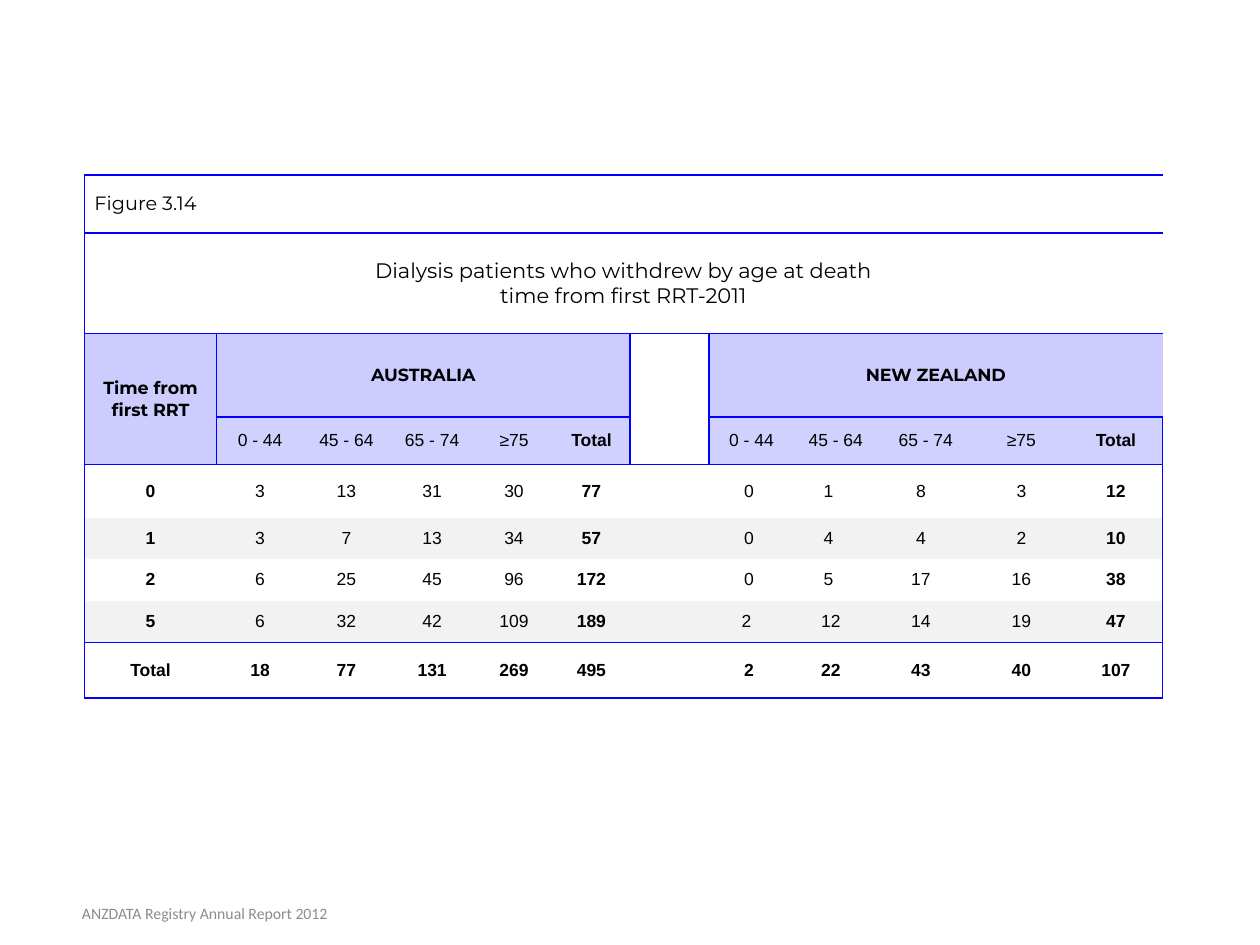
from lxml import etree
from pptx import Presentation
from pptx.dml.color import RGBColor
from pptx.enum import text as t
from pptx.oxml.ns import qn
from pptx.util import Pt

BLACK = RGBColor(0, 0, 0)
GREY = RGBColor(0x8C, 0x8C, 0x8C)
WHITE = RGBColor(0xFF, 0xFF, 0xFF)
BAND = RGBColor(0xF2, 0xF2, 0xF2)
LILAC = RGBColor(0xCC, 0xCC, 0xFF)
PALE = RGBColor(0xD1, 0xD1, 0xFF)
BLUE = RGBColor(0, 0, 0xFF)

MID = t.MSO_ANCHOR.MIDDLE
LEFT, CENTER = t.PP_ALIGN.LEFT, t.PP_ALIGN.CENTER
HEAD = {"name": "Montserrat", "size": Pt(10), "bold": True, "color": BLACK}
BODY = {**HEAD, "name": "Arial", "bold": False}
TOTAL = {**BODY, "bold": True}
FOOT = {"name": "Calibri", "size": Pt(9), "bold": False, "color": GREY}

WIDTHS = [75.6, 49.7, 49, 49, 44.6, 43.9, 45.4, 48.2, 48.2, 54.7, 54.7, 53.3]
HEIGHTS = [33.1, 57.6, 47.5, 27.4, 30.2, 23.8, 23.8, 23.8, 31.7]
GAP = 6  # empty column between the two countries
AGES = ["0 - 44", "45 - 64", "65 - 74", "≥75", "Total"]
DATA = [
    ["0", 3, 13, 31, 30, 77, "", 0, 1, 8, 3, 12],
    ["1", 3, 7, 13, 34, 57, "", 0, 4, 4, 2, 10],
    ["2", 6, 25, 45, 96, 172, "", 0, 5, 17, 16, 38],
    ["5", 6, 32, 42, 109, 189, "", 2, 12, 14, 19, 47],
    ["Total", 18, 77, 131, 269, 495, "", 2, 22, 43, 40, 107],
]
# extra right margin, in steps, of the first three New Zealand columns
SHIFTS = [(1, 3, 2)] * 3 + [(2, 2, 2), (1, 2, 2)]
STEP = 2.78


def write(frame, words, style, align=CENTER):
    frame.text = words
    for para in frame.paragraphs:
        para.alignment = align
        for run in para.runs:
            for key, val in style.items():
                if key == "color":
                    run.font.color.rgb = val
                else:
                    setattr(run.font, key, val)


def ruled_row(edge, col):
    """Tell whether a horizontal rule runs on this row edge in this column."""
    return edge in (0, 1, 2, 4, 8, 9) or (edge == 3 and col not in (0, GAP))


def ruled_col(edge, row):
    return edge in (0, 12) or (edge in (1, GAP, GAP + 1) and row in (2, 3))


def rule(cell, row, col):
    """Set the four borders of a cell."""
    props = cell._tc.get_or_add_tcPr()
    sides = {"L": ruled_col(col, row), "R": ruled_col(col + 1, row),
             "T": ruled_row(row, col), "B": ruled_row(row + 1, col)}
    for side, shown in sides.items():
        line = etree.SubElement(props, qn("a:ln" + side), w=str(Pt(1)))
        if shown:
            fill = etree.SubElement(line, qn("a:solidFill"))
            etree.SubElement(fill, qn("a:srgbClr"), val=str(BLUE))
        else:
            etree.SubElement(line, qn("a:noFill"))


def shade(row, col):
    if row in (2, 3) and col != GAP:
        return LILAC if row == 2 or col == 0 else PALE
    return BAND if row in (5, 7) else WHITE


def prepare(cell, row, col):
    """Give a cell its margins, borders, fill and small empty text size."""
    rule(cell, row, col)
    cell.fill.solid()
    cell.fill.fore_color.rgb = shade(row, col)
    cell.vertical_anchor = MID
    cell.margin_left = cell.margin_right = Pt(2.9)
    cell.margin_top = cell.margin_bottom = Pt(1.4)
    para = cell.text_frame.paragraphs[0]._p
    etree.SubElement(para, qn("a:endParaRPr"), sz="1000")


def add_heads(grid):
    last = len(WIDTHS) - 1
    spans = [(0, 0, 0, last), (1, 0, 1, last), (2, 0, 3, 0),
             (2, 1, 2, GAP - 1), (2, GAP + 1, 2, last)]
    for top, left, low, right in spans:
        grid.cell(top, left).merge(grid.cell(low, right))
    label = grid.cell(0, 0)
    label.margin_left = Pt(5.8)
    write(label.text_frame, "Figure 3.14",
          {**HEAD, "size": Pt(11), "bold": False}, LEFT)
    write(grid.cell(1, 0).text_frame,
          "Dialysis patients who withdrew by age at death\n"
          "time from first RRT-2011",
          {**HEAD, "size": Pt(12), "bold": False})
    write(grid.cell(2, 0).text_frame, "Time from first RRT", HEAD)
    for start, land in ((1, "AUSTRALIA"), (GAP + 1, "NEW ZEALAND")):
        write(grid.cell(2, start).text_frame, land, HEAD)
        for col, age in enumerate(AGES, start):
            style = TOTAL if age == "Total" else BODY
            write(grid.cell(3, col).text_frame, age, style)


def add_counts(grid):
    for row, (vals, shift) in enumerate(zip(DATA, SHIFTS), 4):
        for col, val in enumerate(vals):
            if col == GAP:
                continue
            bold = vals[0] == "Total" or col in (0, 5, 11)
            write(grid.cell(row, col).text_frame, str(val),
                  TOTAL if bold else BODY)
        for col, steps in enumerate(shift, GAP + 1):
            grid.cell(row, col).margin_right = Pt(2.9 + STEP * steps)


def add_grid(slide, left, top):
    frame = slide.shapes.add_table(
        len(HEIGHTS), len(WIDTHS), Pt(left), Pt(top),
        Pt(sum(WIDTHS)), Pt(sum(HEIGHTS)))
    grid = frame.table
    grid.first_row = grid.horz_banding = False
    for col, width in zip(grid.columns, WIDTHS):
        col.width = Pt(width)
    for row, height in enumerate(HEIGHTS):
        grid.rows[row].height = Pt(height)
        for col in range(len(WIDTHS)):
            prepare(grid.cell(row, col), row, col)
    add_heads(grid)
    add_counts(grid)


def add_foot(slide, left, top, width, height):
    box = slide.shapes.add_textbox(Pt(left), Pt(top), Pt(width), Pt(height))
    frame = box.text_frame
    frame.word_wrap = True
    frame.vertical_anchor = MID
    write(frame, "ANZDATA Registry Annual Report 2012", FOOT)


def main():
    deck = Presentation()
    deck.slide_width, deck.slide_height = Pt(720), Pt(540)
    slide = deck.slides.add_slide(deck.slide_layouts[6])
    add_grid(slide, 48.2, 100)
    add_foot(slide, 2.9, 507.6, 228.2, 28.8)
    deck.save("out.pptx")


if __name__ == "__main__":
    main()
